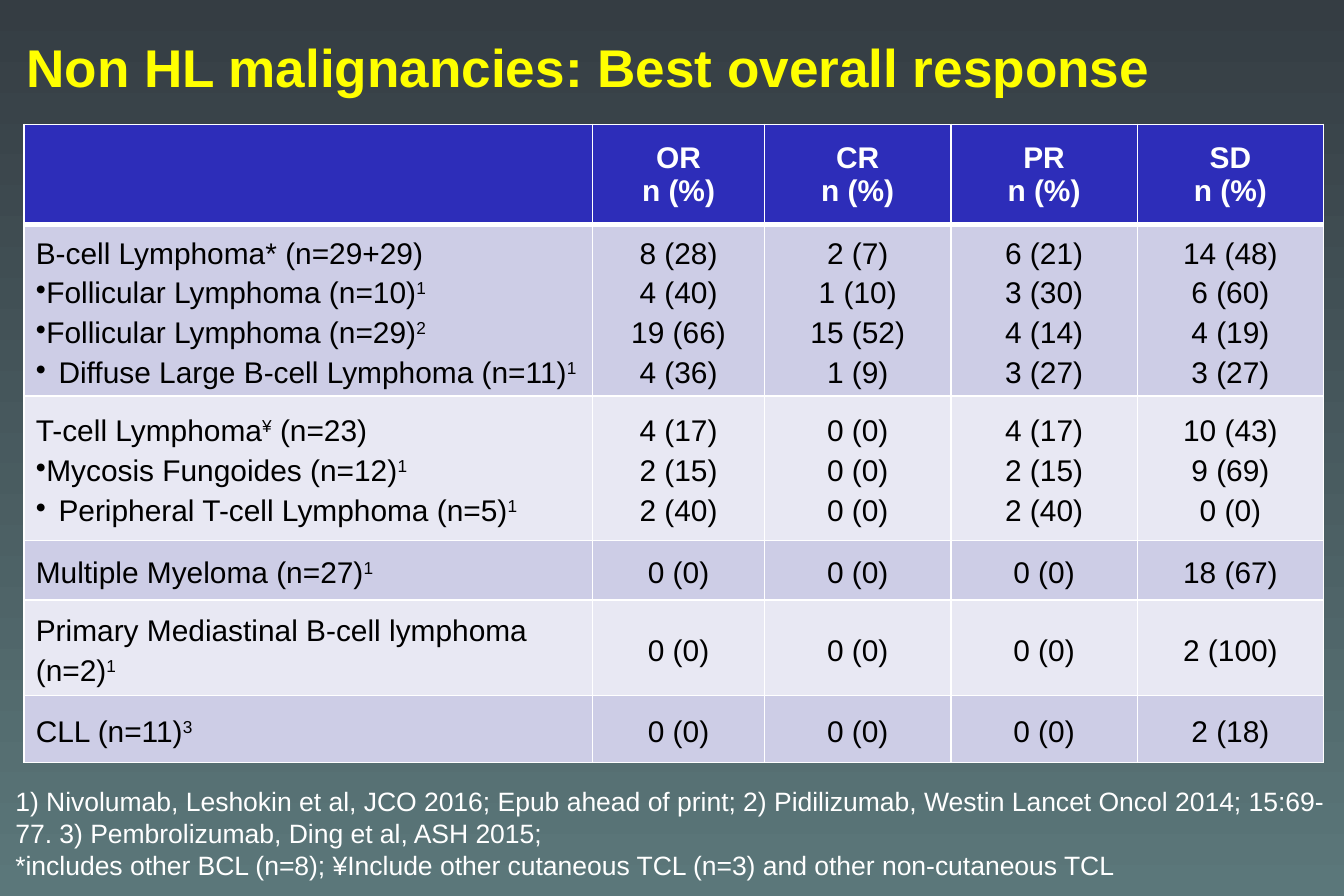
from pptx import Presentation
from pptx.dml.color import RGBColor as Rgb
from pptx.enum.text import MSO_ANCHOR as Anchor, MSO_AUTO_SIZE as Fit, PP_ALIGN as Align
from pptx.oxml import parse_xml
from pptx.oxml.ns import nsdecls
from pptx.util import Emu, Inches, Pt

TITLE = "Non HL malignancies: Best overall response"
HEADS = ["OR", "CR", "PR", "SD"]
UNIT = "n (%)"
GROUPS = [
    [
        ("B-cell Lymphoma* (n=29+29)", None, "8 (28)", "2 (7)", "6 (21)", "14 (48)"),
        ("Follicular Lymphoma (n=10)^1", 0, "4 (40)", "1 (10)", "3 (30)", "6 (60)"),
        ("Follicular Lymphoma (n=29)^2", 0, "19 (66)", "15 (52)", "4 (14)", "4 (19)"),
        ("Diffuse Large B-cell Lymphoma (n=11)^1", 0.19, "4 (36)", "1 (9)", "3 (27)", "3 (27)"),
    ],
    [
        ("T-cell Lymphoma^¥^ (n=23)", None, "4 (17)", "0 (0)", "4 (17)", "10 (43)"),
        ("Mycosis Fungoides (n=12)^1", 0, "2 (15)", "0 (0)", "2 (15)", "9 (69)"),
        ("Peripheral T-cell Lymphoma (n=5)^1", 0.19, "2 (40)", "0 (0)", "2 (40)", "0 (0)"),
    ],
    [("Multiple Myeloma (n=27)^1", None, "0 (0)", "0 (0)", "0 (0)", "18 (67)")],
    [("Primary Mediastinal B-cell lymphoma (n=2)^1", None, "0 (0)", "0 (0)", "0 (0)", "2 (100)")],
    [("CLL (n=11)^3", None, "0 (0)", "0 (0)", "0 (0)", "2 (18)")],
]
NOTES = [
    "1) Nivolumab, Leshokin et al, JCO 2016; Epub ahead of print; 2) Pidilizumab, Westin Lancet Oncol 2014; 15:69-77. 3) Pembrolizumab, Ding et al, ASH 2015;",
    "*includes other BCL (n=8); ¥Include other cutaneous TCL (n=3) and other non-cutaneous TCL",
]

SIZE = (11.25, 7.5)
COLS = [4.76, 1.44, 1.56, 1.56, 1.56]
ROWS = [0.84, 1.37, 1.21, 0.5, 0.8, 0.56]
SPOTS = {
    "title": (0.12, 0.21, 10.55, 0.69),
    "table": (0.2, 1.04, sum(COLS), sum(ROWS)),
    "notes": (0.03, 6.52, 11.22, 0.91),
}
HANG = 0.19

THEME = {
    "back": ["353D43", "5B777A"],
    "head": "2D2DB9",
    "bands": ["CDCDE6", "E8E8F3"],
    "rule": "FFFFFF",
    "title": {"size": 32, "bold": True, "color": "FFFF00"},
    "label": {"size": 18, "bold": True, "color": "FFFFFF"},
    "body": {"size": 18, "bold": False, "color": "000000"},
    "notes": {"size": 16, "bold": False, "color": "FFFFFF"},
}


def place(shape, spot):
    for name, val in zip(("left", "top", "width", "height"), spot):
        setattr(shape, name, Inches(val))


def write(frame, lines, style, **form):
    look = THEME[style]
    font = {"name": "Arial", "size": Pt(look["size"]), "bold": look["bold"]}
    for num, (text, dent) in enumerate(lines):
        para = frame.add_paragraph() if num else frame.paragraphs[0]
        for name, val in form.items():
            setattr(para, name, val)
        if dent is not None:
            props = para._p.get_or_add_pPr()
            props.set("marL", str(Inches(dent)))
            props.set("indent", str(-Inches(HANG)))
            props.append(parse_xml(f'<a:buChar {nsdecls("a")} char="•"/>'))
        for part, words in enumerate(text.split("^")):
            run = para.add_run()
            run.text = words
            for name, val in font.items():
                setattr(run.font, name, val)
            run.font.color.rgb = Rgb.from_string(look["color"])
            if part % 2:
                run._r.get_or_add_rPr().set("baseline", "30000")


def rule(cell, row):
    widths = {"L": 1, "R": 1, "T": 3 if row == 1 else 1, "B": 3 if row == 0 else 1}
    props = cell._tc.get_or_add_tcPr()
    for num, (side, wide) in enumerate(widths.items()):
        props.insert(num, parse_xml(
            f'<a:ln{side} {nsdecls("a")} w="{Pt(wide)}"><a:solidFill>'
            f'<a:srgbClr val="{THEME["rule"]}"/></a:solidFill></a:ln{side}>'))


def fill_table(table):
    for parts, sizes, name in ((table.columns, COLS, "width"), (table.rows, ROWS, "height")):
        for part, size in zip(parts, sizes):
            setattr(part, name, Inches(size))
    for row in range(len(ROWS)):
        for col in range(len(COLS)):
            cell = table.cell(row, col)
            cell.vertical_anchor = Anchor.MIDDLE
            cell.fill.solid()
            shade = THEME["bands"][(row - 1) % 2] if row else THEME["head"]
            cell.fill.fore_color.rgb = Rgb.from_string(shade)
            rule(cell, row)
            side = Align.CENTER if col else Align.LEFT
            if row:
                lines = [(item[col + 1], None) if col else item[:2] for item in GROUPS[row - 1]]
                write(cell.text_frame, lines, "body", alignment=side, line_spacing=Pt(24))
            elif col:
                lines = [(HEADS[col - 1], None), (UNIT, None)]
                write(cell.text_frame, lines, "label", alignment=side)


def main():
    deck = Presentation()
    deck.slide_width, deck.slide_height = map(Inches, SIZE)
    slide = deck.slides.add_slide(deck.slide_layouts[5])
    back = slide.background.fill
    back.gradient()
    back.gradient_angle = 270
    for stop, shade, pos in zip(back.gradient_stops, THEME["back"], (0, 1)):
        stop.color.rgb = Rgb.from_string(shade)
        stop.position = pos

    grid = slide.shapes.add_table(len(ROWS), len(COLS), *map(Inches, SPOTS["table"]))
    fill_table(grid.table)

    notes = slide.shapes.add_textbox(*map(Inches, SPOTS["notes"])).text_frame
    notes.word_wrap = True
    notes.auto_size = Fit.SHAPE_TO_FIT_TEXT
    write(notes, [(line, None) for line in NOTES], "notes")

    title = slide.shapes.title
    place(title, SPOTS["title"])
    title.text_frame.vertical_anchor = Anchor.MIDDLE
    title.text_frame.auto_size = Fit.NONE
    write(title.text_frame, [(TITLE, None)], "title", alignment=Align.LEFT)
    deck.save("out.pptx")


if __name__ == "__main__":
    main()
